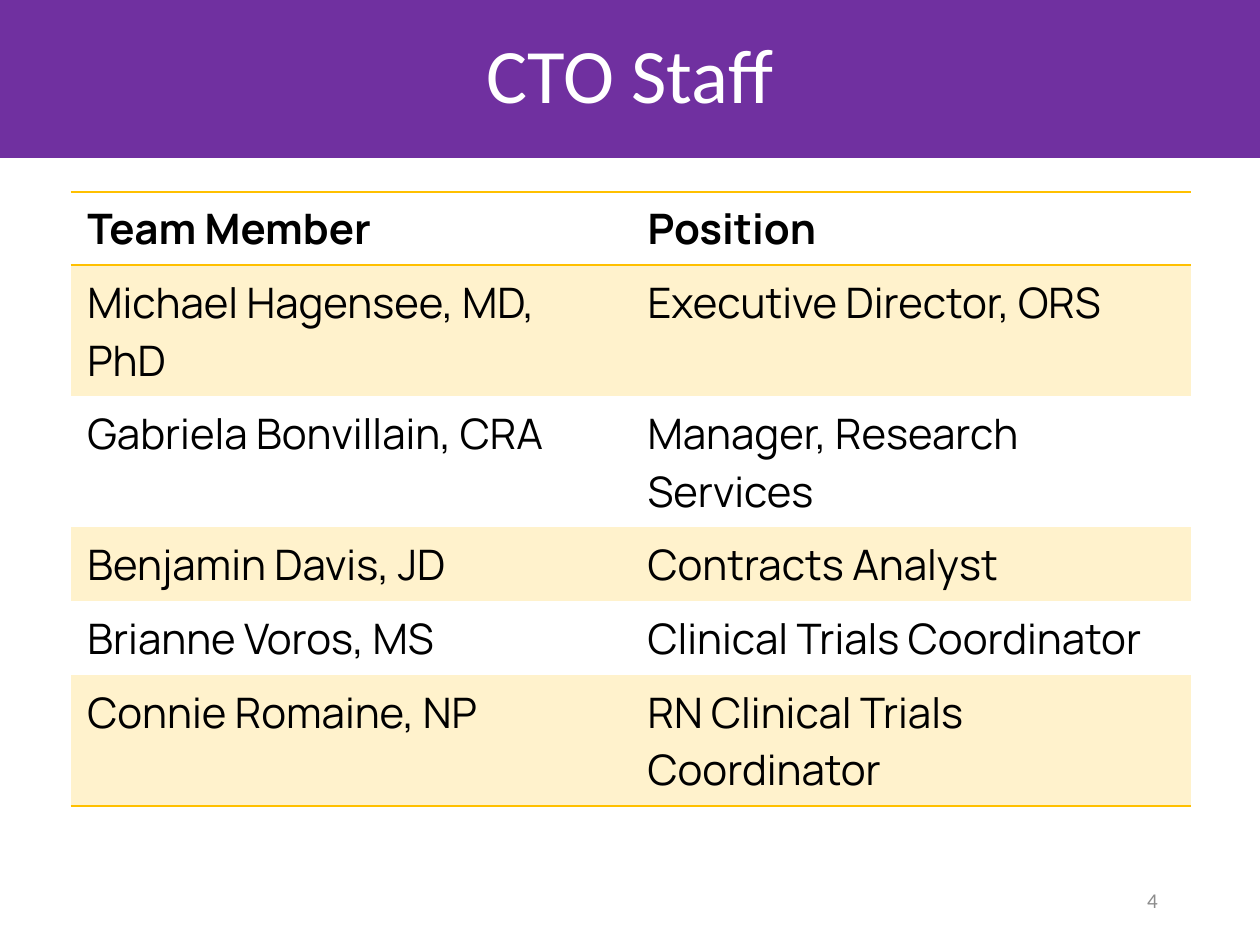
from pptx import Presentation
from pptx.util import Inches, Pt
from pptx.dml.color import RGBColor
from pptx.enum.text import PP_ALIGN, MSO_ANCHOR
from pptx.oxml import parse_xml
from pptx.oxml.ns import nsdecls, qn

GOLD, CREAM = "FFC000", "FFF2CC"


def color(code):
    return RGBColor.from_string(code)


def write(frame, text, font="Manrope", size=18, ink="000000", bold=False,
          align=PP_ALIGN.LEFT, anchor=MSO_ANCHOR.TOP, spacing=None):
    frame.word_wrap = True
    frame.vertical_anchor = anchor
    para = frame.paragraphs[0]
    para.alignment = align
    para.line_spacing = spacing
    run = para.add_run()
    run.text = text
    run.font.name = font
    run.font.size = Pt(size)
    run.font.bold = bold
    run.font.color.rgb = color(ink)


# A 4:3 slide
deck = Presentation()
deck.slide_width, deck.slide_height = Inches(7.5), Inches(7.5 * 3 / 4)
slide = deck.slides.add_slide(deck.slide_layouts[5])

# Title band
title = slide.shapes.title
title.left, title.top = Inches(0), Inches(0)
title.width, title.height = Inches(7.5), Inches(0.94)
title.fill.solid()
title.fill.fore_color.rgb = color("7030A0")
write(title.text_frame, "CTO Staff", font="Calibri", size=33, ink="FFFFFF",
      align=PP_ALIGN.CENTER, anchor=MSO_ANCHOR.MIDDLE, spacing=0.9)

# Page number
number = slide.shapes.add_textbox(Inches(5.3), Inches(5.21), Inches(1.69), Inches(0.3))
write(number.text_frame, "4", font="Calibri", size=9, ink="8C8C8C",
      align=PP_ALIGN.RIGHT, anchor=MSO_ANCHOR.MIDDLE)

# Staff table: row height, then the two cells
one, two = 0.44, 0.78
staff = [
    (one, "Team Member", "Position"),
    (two, "Michael Hagensee, MD, PhD", "Executive Director, ORS"),
    (two, "Gabriela Bonvillain, CRA", "Manager, Research Services"),
    (one, "Benjamin Davis, JD", "Contracts Analyst"),
    (one, "Brianne Voros, MS", "Clinical Trials Coordinator"),
    (two, "Connie Romaine, NP", "RN Clinical Trials Coordinator"),
]
last = len(staff) - 1
table = slide.shapes.add_table(len(staff), 2, Inches(0.42), Inches(1.14),
                               Inches(6.67), Inches(3.66)).table
table.horz_banding = False
# Plain style without a grid
style = table._tbl.tblPr.find(qn("a:tableStyleId"))
style.text = "{2D5ABB26-0587-4C30-8999-92F81FD0307C}"

for r, (height, *row) in enumerate(staff):
    table.rows[r].height = Inches(height)
    edges = {0: ["lnT", "lnB"], last: ["lnB"]}.get(r, [])
    for c, text in enumerate(row):
        cell = table.cell(r, c)
        write(cell.text_frame, text, bold=r == 0)
        # Gold rules, which come before the fill
        for edge in edges:
            cell._tc.get_or_add_tcPr().append(parse_xml(
                f'<a:{edge} {nsdecls("a")} w="{Pt(1)}"><a:solidFill>'
                f'<a:srgbClr val="{GOLD}"/></a:solidFill></a:{edge}>'))
        # Every second row is tinted
        if r % 2:
            cell.fill.solid()
            cell.fill.fore_color.rgb = color(CREAM)
        else:
            cell.fill.background()

deck.save("out.pptx")
